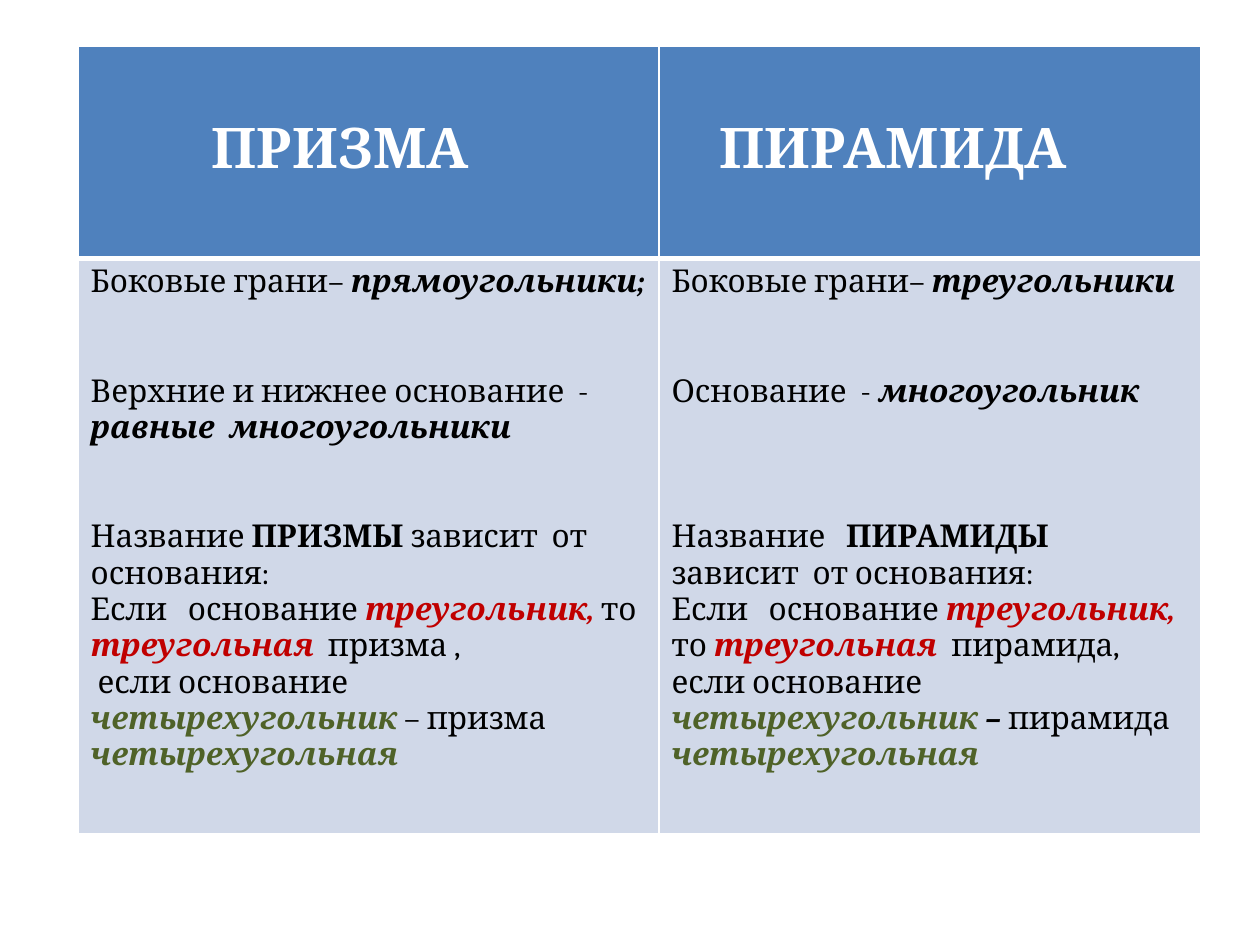
import pptx
import pptx.dml.color
import pptx.oxml
import pptx.util
from pptx.util import Inches

COLORS = {"header": "4F81BD", "body": "D0D8E8", "white": "FFFFFF",
          "black": "000000", "red": "C00000", "green": "4F6228"}
STYLES = {
    "header": {"size": 32, "bold": True, "italic": False, "color": "white"},
    "plain": {"size": 18, "bold": False, "italic": False, "color": "black"},
    "bold": {"size": 18, "bold": True, "italic": False, "color": "black"},
    "term": {"size": 18, "bold": True, "italic": True, "color": "black"},
    "red": {"size": 18, "bold": True, "italic": True, "color": "red"},
    "green": {"size": 18, "bold": True, "italic": True, "color": "green"},
}
LINE = 20.8  # height of one body line in points

# Each paragraph: lines of space before it, then its (text, style) runs
HEADERS = [
    [(0, [("ПРИЗМА", "header")])],
    [(0, [("ПИРАМИДА", "header")])],
]
PRISM = [
    (0, [("Боковые грани– ", "plain"), ("прямоугольники;", "term")]),
    (2, [("Верхние и нижнее основание  -", "plain")]),
    (0, [("равные  многоугольники", "term")]),
    (2, [("Название ", "plain"), ("ПРИЗМЫ", "bold"),
         (" зависит  от основания:", "plain")]),
    (0, [("Если   основание ", "plain"), ("треугольник, ", "red"), ("то ", "plain"),
         ("треугольная ", "red"), (" призма ,", "plain")]),
    (0, [(" если основание ", "plain"), ("четырехугольник ", "green"),
         ("– призма ", "plain"), ("четырехугольная", "green")]),
]
PYRAMID = [
    (0, [("Боковые грани–", "plain"), (" треугольники", "term")]),
    (2, [("Основание  - ", "plain"), ("многоугольник", "term")]),
    (3, [("Название  ", "plain"), (" ПИРАМИДЫ ", "bold"), ("\n", "plain"),
         ("зависит  от основания:", "plain")]),
    (0, [("Если   основание ", "plain"), ("треугольник, ", "red"), ("то ", "plain"),
         ("треугольная  ", "red"), ("пирамида,", "plain")]),
    (0, [("если основание ", "plain"), ("четырехугольник ", "green"), ("– ", "term"),
         ("пирамида ", "plain"), ("четырехугольная", "green")]),
]


def fill_text(tf, paragraphs):
    for i, (gap, runs) in enumerate(paragraphs):
        p = tf.add_paragraph() if i else tf.paragraphs[0]
        if gap:
            p.space_before = pptx.util.Pt(gap * LINE)
        for text, style in runs:
            if text == "\n":
                p.add_line_break()
                continue
            r = p.add_run()
            r.text = text
            r.font.name = "Cambria"
            for name, value in STYLES[style].items():
                if name == "color":
                    r.font.color.rgb = pptx.dml.color.RGBColor.from_string(COLORS[value])
                else:
                    setattr(r.font, name, pptx.util.Pt(value) if name == "size" else value)


def set_borders(cell, widths):
    """Draw white borders; widths in points run left, right, top, bottom."""
    tcPr = cell._tc.get_or_add_tcPr()
    for i, (side, width) in enumerate(zip("LRTB", widths)):
        tcPr.insert(i, pptx.oxml.parse_xml(
            f'<a:ln{side} xmlns:a="http://schemas.openxmlformats.org/drawingml/2006/main"'
            f' w="{pptx.util.Pt(width)}"><a:solidFill><a:srgbClr val="{COLORS["white"]}"/>'
            f'</a:solidFill></a:ln{side}>'))


prs = pptx.Presentation()
prs.slide_width, prs.slide_height = Inches(10), Inches(7.5)
s = prs.slides.add_slide(prs.slide_layouts[6])

table = s.shapes.add_table(2, 2, Inches(0.62), Inches(0.37),
                           Inches(8.91), Inches(6.25)).table
for column, width in zip(table.columns, (4.61, 4.3)):
    column.width = Inches(width)
for row, height in zip(table.rows, (1.68, 4.57)):
    row.height = Inches(height)

rows = [("header", HEADERS, (1, 1, 1, 3)), ("body", [PRISM, PYRAMID], (1, 1, 3, 1))]
for i, (fill, contents, widths) in enumerate(rows):
    for j, paragraphs in enumerate(contents):
        cell = table.cell(i, j)
        cell.fill.solid()
        cell.fill.fore_color.rgb = pptx.dml.color.RGBColor.from_string(COLORS[fill])
        set_borders(cell, widths)
        fill_text(cell.text_frame, paragraphs)

for cell, left in zip(table.rows[0].cells, (1.06, 0.48)):
    cell.margin_left, cell.margin_top = Inches(left), Inches(0.57)

prs.save("out.pptx")
